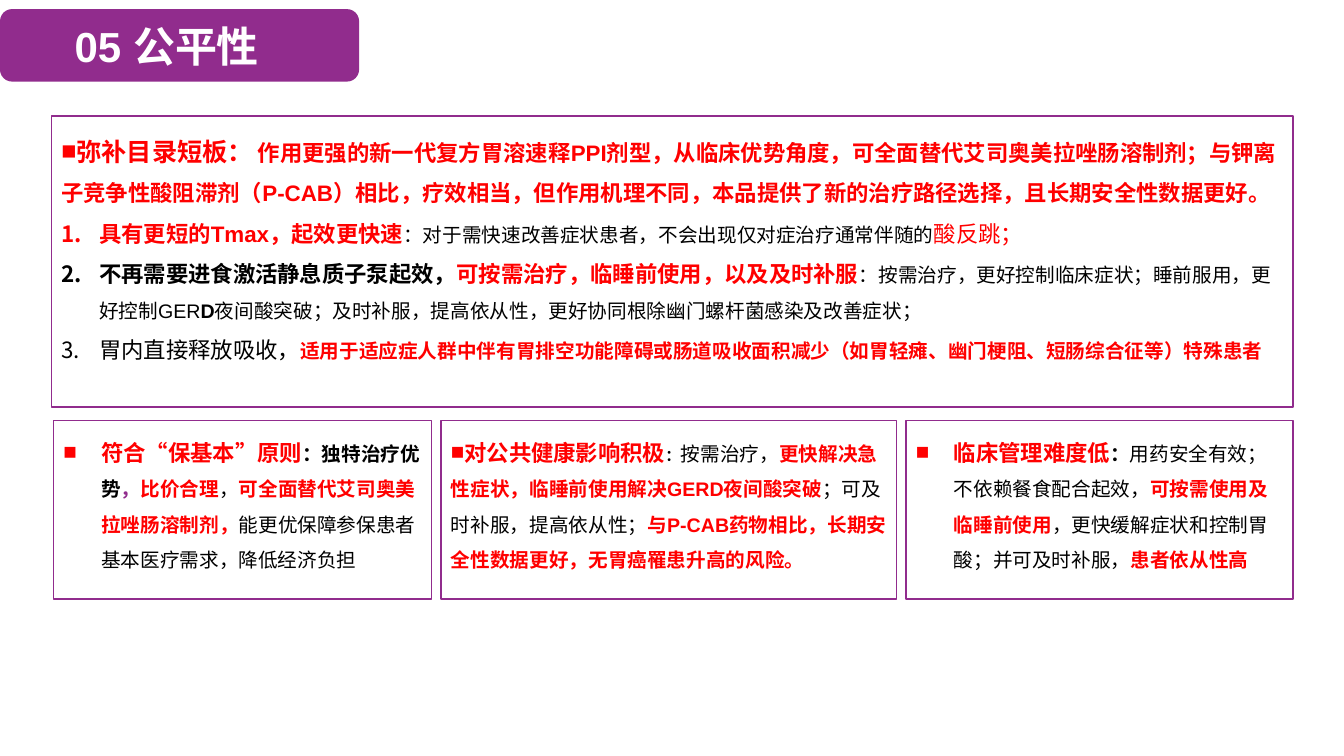
from lxml import etree
from pptx import Presentation
from pptx.dml.color import RGBColor
from pptx.enum.shapes import MSO_SHAPE
from pptx.enum.text import MSO_ANCHOR, MSO_AUTO_SIZE, PP_ALIGN
from pptx.oxml.ns import qn
from pptx.util import Pt

RECT, ROUNDED = MSO_SHAPE.RECTANGLE, MSO_SHAPE.ROUNDED_RECTANGLE
TOP = MSO_ANCHOR.TOP
LEFT, CENTER = PP_ALIGN.LEFT, PP_ALIGN.CENTER
GROW = MSO_AUTO_SIZE.SHAPE_TO_FIT_TEXT

COLORS = {"purple": "912C8D", "red": "FF0000", "black": "000000", "white": "FFFFFF"}
FONT = "Arial"
HANG = 27


class Deck:
    def __init__(self, prs):
        self.slide = prs.slides.add_slide(prs.slide_layouts[6])

    def color(self, name):
        return RGBColor.from_string(COLORS[name])

    def shape(self, kind, left, top, width, height, fill, line=None):
        sp = self.slide.shapes.add_shape(kind, Pt(left), Pt(top), Pt(width), Pt(height))
        sp.shadow.inherit = False
        sp.fill.solid()
        sp.fill.fore_color.rgb = self.color(fill)
        if line:
            sp.line.color.rgb = self.color(line)
            sp.line.width = Pt(1)
        else:
            sp.line.fill.background()
        return sp

    def run(self, p, text, size, color, bold=False):
        r = p.add_run()
        r.text = text
        r.font.name = FONT
        r.font.size = Pt(size)
        r.font.bold = bold
        r.font.color.rgb = self.color(color)
        r._r.get_or_add_rPr().set("lang", "zh-CN")

    def title(self, text, left, top, width, height):
        tb = self.slide.shapes.add_textbox(Pt(left), Pt(top), Pt(width), Pt(height))
        tf = tb.text_frame
        tf.word_wrap = True
        tf.auto_size = GROW
        p = tf.paragraphs[0]
        p.alignment = CENTER
        self.run(p, text, 30, "white", True)

    def bullet(self, p, numbered, margin, indent):
        pPr = p._p.get_or_add_pPr()
        pPr.set("marL", str(Pt(margin)))
        pPr.set("indent", str(Pt(indent)))
        etree.SubElement(pPr, qn("a:buFont")).set("typeface", FONT)
        if numbered:
            etree.SubElement(pPr, qn("a:buAutoNum")).set("type", "arabicPeriod")
        else:
            etree.SubElement(pPr, qn("a:buChar")).set("char", "■")

    def panel(self, left, top, width, height, paragraphs):
        """Outlined box; each paragraph is (numbered, margin, indent, runs)."""
        tf = self.shape(RECT, left, top, width, height, "white", "purple").text_frame
        tf.word_wrap = True
        tf.vertical_anchor = TOP
        for i, (numbered, margin, indent, runs) in enumerate(paragraphs):
            p = tf.add_paragraph() if i else tf.paragraphs[0]
            p.alignment = LEFT
            p.line_spacing = 1.5
            p.space_before = Pt(0 if margin else 6)
            p.level = 0 if margin else 1
            self.bullet(p, numbered, margin, indent)
            for text, *style in runs:
                self.run(p, text, *style)


HEAD = (16, "red", True)
KEY = (14, "red", True)
STRONG = (14, "black", True)
BODY = (14, "black")

# Main panel: gaps filled in the catalogue
MAIN = [
    (False, 0, -22.5, [
        ("弥补目录短板：", 18, "red", True),
        (" 作用更强的新一代复方胃溶速释PPI剂型，从临床优势角度，可全面替代艾司奥美拉唑肠溶制剂；"
         "与钾离子竞争性酸阻滞剂（P-CAB）相比，疗效相当，但作用机理不同，"
         "本品提供了新的治疗路径选择，且长期安全性数据更好。", *HEAD)]),
    (True, HANG, -HANG, [
        ("具有更短的Tmax，起效更快速", *HEAD),
        ("：对于需快速改善症状患者，不会出现仅对症治疗通常伴随的", *BODY),
        ("酸反跳；", 16, "red")]),
    (True, HANG, -HANG, [
        ("不再需要进食激活静息质子泵起效，", 16, "black", True),
        ("可按需治疗，临睡前使用，以及及时补服", *HEAD),
        ("：按需治疗，更好控制临床症状；睡前服用，更好控制GER", *BODY),
        ("D", *STRONG),
        ("夜间酸突破；及时补服，提高依从性，更好协同根除幽门螺杆菌感染及改善症状；", *BODY)]),
    (True, HANG, -HANG, [
        ("胃内直接释放吸收，", 16, "black"),
        ("适用于适应症人群中伴有胃排空功能障碍或肠道吸收面积减少"
         "（如胃轻瘫、幽门梗阻、短肠综合征等）特殊患者", *KEY)]),
]

# Lower panels: (width, text margin, runs)
LOWER = [
    (270, HANG, [
        ("符合“保基本”原则", *HEAD),
        ("：独特治疗优势", *STRONG),
        ("，", 14, "purple", True),
        ("比价合理", *KEY),
        ("，", *BODY),
        ("可全面替代艾司奥美拉唑肠溶制剂，", *KEY),
        ("能更优保障参保患者基本医疗需求，降低经济负担", *BODY)]),
    (325.4, 0, [
        ("对公共健康影响积极", *HEAD),
        ("：", 11, "black", True),
        ("按需治疗，", *BODY),
        ("更快解决急性症状，临睡前使用解决GERD夜间酸突破", *KEY),
        ("；可及时补服，提高依从性；", *BODY),
        ("与P-CAB药物相比，长期安全性数据更好，无胃癌罹患升高的风险。", *KEY)]),
    (276.5, HANG, [
        ("临床管理难度低", *HEAD),
        ("：", *STRONG),
        ("用药安全有效；不依赖餐食配合起效，", *BODY),
        ("可按需使用及临睡前使用", *KEY),
        ("，更快缓解症状和控制胃酸；并可及时补服，", *BODY),
        ("患者依从性高", *KEY)]),
]


def main():
    prs = Presentation()
    prs.slide_width, prs.slide_height = Pt(960), Pt(540)
    deck = Deck(prs)

    # Section banner
    deck.shape(ROUNDED, 0, 6.5, 256.5, 51.8, "purple")
    deck.title("05 公平性", 0, 10.8, 238.3, 43.9)

    # Panels
    deck.panel(36.7, 82.8, 887, 208, MAIN)
    left, gap = 38.2, 6.8
    for width, margin, runs in LOWER:
        deck.panel(left, 300.2, width, 127.6, [(False, margin, -HANG, runs)])
        left += width + gap

    prs.save("out.pptx")


if __name__ == "__main__":
    main()
